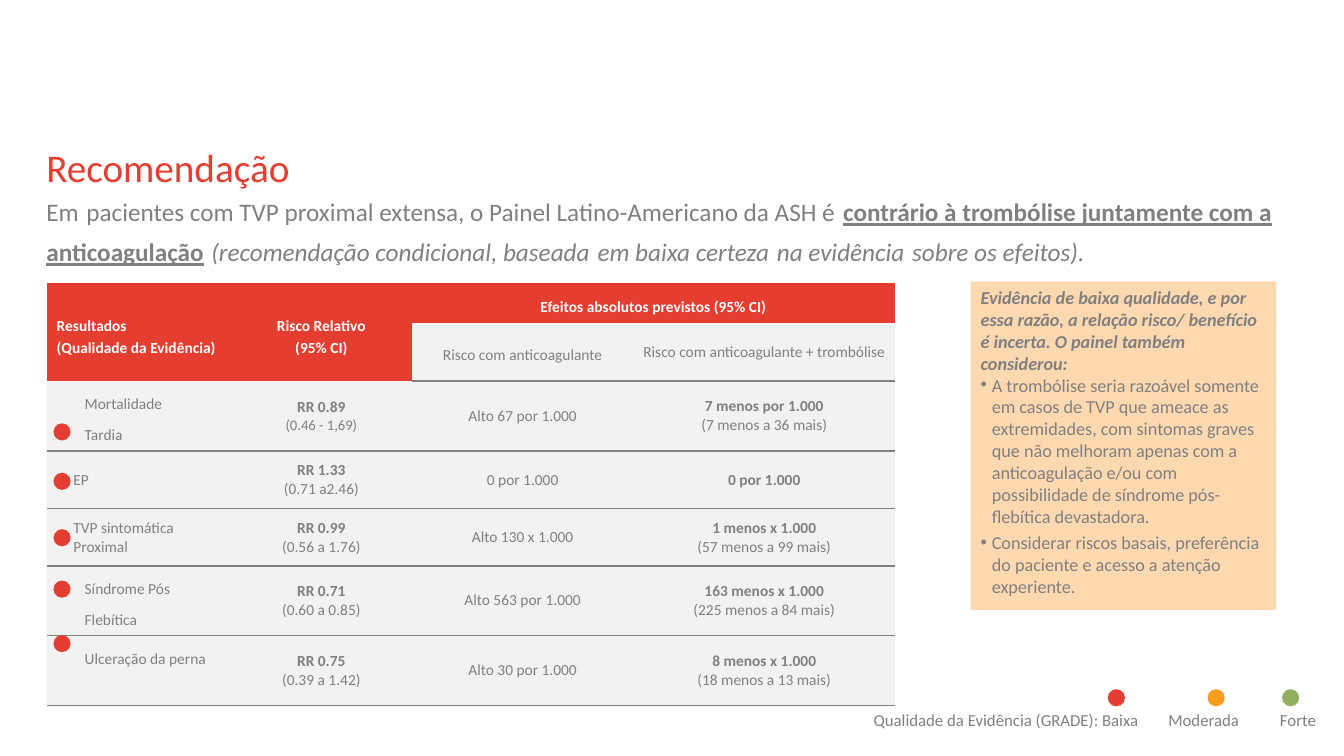
"""Builds the slide with the recommendation on thrombolysis in extensive proximal DVT."""
from lxml.etree import SubElement
from pptx import Presentation
from pptx.dml.color import RGBColor
from pptx.enum.shapes import MSO_SHAPE
from pptx.enum.text import MSO_ANCHOR, PP_ALIGN
from pptx.oxml import parse_xml
from pptx.oxml.ns import nsdecls, qn
from pptx.util import Pt

RED, DOT_RED, GRAY, LIGHT, PEACH, WHITE = "E53E31", "E43E32", "808080", "F2F2F2", "FED9B0", "FFFFFF"
NO_STYLE = "{2D5ABB26-0587-4C30-8999-92F81FD0307C}"
DOT = 12.24

TITLE = "Recomendação"
RECOMMENDATION = [
    ("Em", {}),
    ("pacientes com TVP proximal extensa, o Painel Latino-Americano da ASH é", {}),
    ("contrário à trombólise juntamente com a anticoagulação", {"bold": True, "underline": True}),
    ("(recomendação condicional, baseada", {"italic": True}),
    ("em baixa certeza", {"italic": True}),
    ("na evidência", {"italic": True}),
    ("sobre os efeitos).", {"italic": True}),
]
PANEL_LEAD = ("Evidência de baixa qualidade, e por essa razão, a relação risco/ benefício é incerta. "
              "O painel também considerou:")
PANEL_POINTS = [
    "A trombólise seria razoável somente em casos de TVP que ameace as extremidades, com sintomas graves "
    "que não melhoram apenas com a anticoagulação e/ou com possibilidade de síndrome pós-flebítica devastadora.",
    "Considerar riscos basais, preferência do paciente e acesso a atenção experiente.",
]
COLUMN_WIDTHS = [131.2, 129.2, 158.4, 186.8]
HEADER_HEIGHTS = [28.6, 41.4]
HEADERS = [
    dict(at=(0, 0), to=(1, 0), lines=["Resultados", "(Qualidade da Evidência)"], shift=7, centred=False),
    dict(at=(0, 1), to=(1, 1), lines=["Risco Relativo", "(95% CI)"], shift=7),
    dict(at=(0, 2), to=(0, 3), lines=["Efeitos absolutos previstos (95% CI)"], shift=6),
]
SUBHEADERS = [
    dict(at=(1, 2), lines=["Risco com anticoagulante"], shift=4),
    dict(at=(1, 3), lines=["Risco com anticoagulante + trombólise"], shift=0),
]
OUTCOMES = [
    dict(name=["Mortalidade", "Tardia"], indent=20, gap=8.6, shift=5, height=50, dot_top=302.4,
         ratio=["RR 0.89", "(0.46 - 1,69)"], ratio_size=10.5, baseline="Alto 67 por 1.000",
         effect=["7 menos por 1.000", "(7 menos a 36 mais)"]),
    dict(name=["EP"], indent=12, height=41.1, dot_top=337.7,
         ratio=["RR 1.33", "(0.71 a2.46)"], baseline="0 por 1.000", effect=["0 por 1.000"]),
    dict(name=["TVP sintomática", "Proximal"], indent=12, height=41.1, dot_top=378,
         ratio=["RR 0.99", "(0.56 a 1.76)"], baseline="Alto 130 x 1.000",
         effect=["1 menos x 1.000", "(57 menos a 99 mais)"]),
    dict(name=["Síndrome Pós", "Flebítica"], indent=20, gap=8.6, shift=5, height=49.6, dot_top=414.7,
         ratio=["RR 0.71", "(0.60 a 0.85)"], baseline="Alto 563 por 1.000",
         effect=["163 menos x 1.000", "(225 menos a 84 mais)"]),
    dict(name=["Ulceração da perna"], indent=20, shift=-16, height=50, dot_top=453.6,
         ratio=["RR 0.75", "(0.39 a 1.42)"], baseline="Alto 30 por 1.000",
         effect=["8 menos x 1.000", "(18 menos a 13 mais)"]),
]
LEGEND = [
    ("Qualidade da Evidência (GRADE): Baixa", 624, 200, DOT_RED, 791.3),
    ("Moderada", 834.5, 65, "F99D1C", 862.6),
    ("Forte", 914.3, 40, "91AF5F", 915.8),
]


def rgb(value):
    return RGBColor.from_string(value)


def add_text(paragraph, text, size=11, color=GRAY, bold=False, italic=False, underline=False):
    run = paragraph.add_run()
    run.text = text
    font = run.font
    font.name, font.size = "Calibri", Pt(size)
    font.bold, font.italic, font.underline = bold, italic, underline
    font.color.rgb = rgb(color)


def add_paragraph(frame, first):
    return frame.paragraphs[0] if first else frame.add_paragraph()


def add_box(slide, left, top, width, height):
    frame = slide.shapes.add_textbox(Pt(left), Pt(top), Pt(width), Pt(height)).text_frame
    frame.word_wrap = True
    frame.margin_left = frame.margin_right = frame.margin_top = frame.margin_bottom = 0
    return frame


def add_filled(slide, kind, left, top, width, height, color):
    filled = slide.shapes.add_shape(kind, Pt(left), Pt(top), Pt(width), Pt(height))
    filled.shadow.inherit = False
    filled.fill.solid()
    filled.fill.fore_color.rgb = rgb(color)
    filled.line.fill.background()
    return filled


def add_dot(slide, left, top, color):
    add_filled(slide, MSO_SHAPE.OVAL, left, top, DOT, DOT, color)


def fill_cell(cell, lines, fill=LIGHT, centred=True, shift=0, indent=0, gap=0, ruled=True):
    margin_top = max(0, 3.6 + shift / 2)
    cell.vertical_anchor = MSO_ANCHOR.MIDDLE
    cell.margin_left = Pt((5 if centred else 6.7) + indent)
    cell.margin_right = Pt(5)
    cell.margin_top = Pt(margin_top)
    cell.margin_bottom = Pt(margin_top - shift)
    cell.fill.solid()
    cell.fill.fore_color.rgb = rgb(fill)
    for number, (text, style) in enumerate(lines):
        paragraph = add_paragraph(cell.text_frame, number == 0)
        paragraph.alignment = PP_ALIGN.CENTER if centred else PP_ALIGN.LEFT
        if number and gap:
            paragraph.space_before = Pt(gap)
        add_text(paragraph, text, **style)
    if ruled:
        rule = parse_xml(f'<a:lnB {nsdecls("a")} w="{Pt(1)}"><a:solidFill><a:srgbClr val="{GRAY}"/>'
                         '</a:solidFill></a:lnB>')
        cell._tc.get_or_add_tcPr().insert(0, rule)


def add_results(slide):
    heights = HEADER_HEIGHTS + [outcome["height"] for outcome in OUTCOMES]
    results = slide.shapes.add_table(len(heights), len(COLUMN_WIDTHS), Pt(33.8), Pt(202.2),
                                     Pt(sum(COLUMN_WIDTHS)), Pt(sum(heights))).table
    results.first_row = results.horz_banding = False
    results._tbl.tblPr.find(qn("a:tableStyleId")).text = NO_STYLE
    for column, width in zip(results.columns, COLUMN_WIDTHS):
        column.width = Pt(width)
    for row, height in zip(results.rows, heights):
        row.height = Pt(height)
    for header in HEADERS:
        cell = results.cell(*header["at"])
        cell.merge(results.cell(*header["to"]))
        lines = [(text, {"color": WHITE, "bold": True}) for text in header["lines"]]
        fill_cell(cell, lines, RED, header.get("centred", True), header["shift"], gap=2.3, ruled=False)
    for header in SUBHEADERS:
        fill_cell(results.cell(*header["at"]), [(text, {}) for text in header["lines"]], shift=header["shift"])
    for row, outcome in enumerate(OUTCOMES, len(HEADER_HEIGHTS)):
        fill_cell(results.cell(row, 0), [(text, {}) for text in outcome["name"]], centred=False,
                  shift=outcome.get("shift", 0), indent=outcome["indent"], gap=outcome.get("gap", 0))
        estimate, interval = outcome["ratio"]
        fill_cell(results.cell(row, 1), [(estimate, {"bold": True}),
                                         (interval, {"size": outcome.get("ratio_size", 11)})])
        fill_cell(results.cell(row, 2), [(outcome["baseline"], {})])
        fill_cell(results.cell(row, 3), [(text, {"bold": number == 0})
                                         for number, text in enumerate(outcome["effect"])])
        add_dot(slide, 38.2, outcome["dot_top"], DOT_RED)


def add_panel(slide):
    panel = add_filled(slide, MSO_SHAPE.RECTANGLE, 693.4, 201, 218.2, 234.7, PEACH).text_frame
    panel.word_wrap = True
    panel.vertical_anchor = MSO_ANCHOR.TOP
    lead = panel.paragraphs[0]
    lead.alignment = PP_ALIGN.LEFT
    add_text(lead, PANEL_LEAD, size=13, bold=True, italic=True)
    for point in PANEL_POINTS:
        paragraph = panel.add_paragraph()
        paragraph.alignment = PP_ALIGN.LEFT
        paragraph.space_after = Pt(3)
        properties = paragraph._p.get_or_add_pPr()
        properties.set("marL", str(Pt(8)))
        properties.set("indent", str(-Pt(8)))
        SubElement(properties, qn("a:buFont"), typeface="Arial")
        SubElement(properties, qn("a:buChar"), char="•")
        add_text(paragraph, point, size=13)


def main():
    deck = Presentation()
    deck.slide_width, deck.slide_height = Pt(960), Pt(540)
    slide = deck.slides.add_slide(deck.slide_layouts[6])
    add_text(add_box(slide, 33.1, 102.4, 864, 40).paragraphs[0], TITLE, size=28, color=RED)
    recommendation = add_box(slide, 33.1, 134.6, 902, 59).paragraphs[0]
    recommendation.line_spacing = Pt(28.6)
    for number, (text, style) in enumerate(RECOMMENDATION):
        if number:
            add_text(recommendation, " ", size=24)
        add_text(recommendation, text, size=18, **style)
    add_results(slide)
    add_panel(slide)
    for label, label_left, label_width, color, dot_left in LEGEND:
        add_text(add_box(slide, label_left, 506.8, label_width, 15).paragraphs[0], label, size=12)
        add_dot(slide, dot_left, 492.3, color)
    deck.save("out.pptx")


if __name__ == "__main__":
    main()
